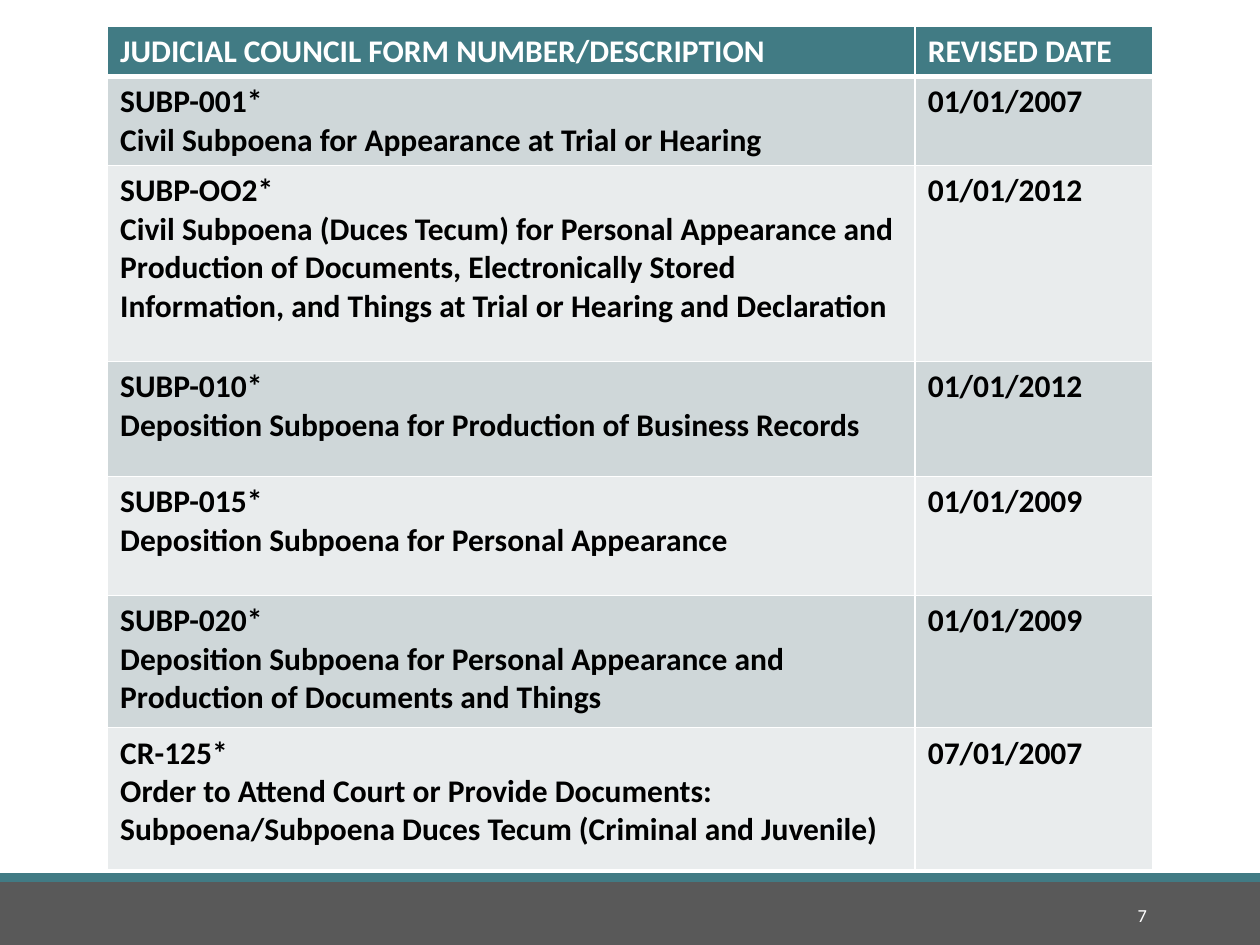
from lxml import etree
from pptx import Presentation
from pptx.dml.color import RGBColor
from pptx.enum.shapes import MSO_SHAPE
from pptx.enum.text import MSO_ANCHOR, PP_ALIGN
from pptx.oxml.ns import qn
from pptx.util import Pt

RECTANGLE = MSO_SHAPE.RECTANGLE
MIDDLE = MSO_ANCHOR.MIDDLE
LEFT, RIGHT = PP_ALIGN.LEFT, PP_ALIGN.RIGHT

WHITE = RGBColor(0xFF, 0xFF, 0xFF)
BLACK = RGBColor(0x00, 0x00, 0x00)
TEAL = RGBColor(0x41, 0x7B, 0x84)
GRAY = RGBColor(0x59, 0x59, 0x59)
BANDS = (RGBColor(0xCF, 0xD7, 0xD9), RGBColor(0xE9, 0xEC, 0xED))

SLIDE_WIDTH, SLIDE_HEIGHT = 720, 540
COLUMN_WIDTHS = (461.5, 135.5)
ROW_HEIGHTS = (28.8, 51, 112, 65.7, 68, 75.6, 81)

HEADER = ("JUDICIAL COUNCIL FORM NUMBER/DESCRIPTION", "REVISED DATE")
FORMS = (
    ("SUBP-001*", "Civil Subpoena for Appearance at Trial or Hearing", "01/01/2007"),
    ("SUBP-OO2*",
     "Civil Subpoena (Duces Tecum) for Personal Appearance and Production of "
     "Documents, Electronically Stored Information, and Things at Trial or "
     "Hearing and Declaration", "01/01/2012"),
    ("SUBP-010*", "Deposition Subpoena for Production of Business Records", "01/01/2012"),
    ("SUBP-015*", "Deposition Subpoena for Personal Appearance", "01/01/2009"),
    ("SUBP-020*",
     "Deposition Subpoena for Personal Appearance and Production of Documents "
     "and Things", "01/01/2009"),
    ("CR-125*",
     "Order to Attend Court or Provide Documents: Subpoena/Subpoena Duces Tecum "
     "(Criminal and Juvenile)", "07/01/2007"),
)


class SlideBuilder:
    """Holds the text style and the slide being built."""

    font = "Calibri"

    def __init__(self, slide):
        self.slide = slide

    def set_text(self, text_frame, text, size, color, bold=False, align=LEFT):
        text_frame.text = text
        for paragraph in text_frame.paragraphs:
            paragraph.alignment = align
            for run in paragraph.runs:
                run.font.name = self.font
                run.font.size = Pt(size)
                run.font.bold = bold
                run.font.color.rgb = color

    def bar(self, top, height, color):
        shape = self.slide.shapes.add_shape(
            RECTANGLE, 0, Pt(top), Pt(SLIDE_WIDTH), Pt(height))
        shape.shadow.inherit = False
        shape.fill.solid()
        shape.fill.fore_color.rgb = color
        shape.line.fill.background()

    def text(self, left, top, width, height, text, size, color, align):
        box = self.slide.shapes.add_textbox(Pt(left), Pt(top), Pt(width), Pt(height))
        box.text_frame.word_wrap = True
        box.text_frame.vertical_anchor = MIDDLE
        self.set_text(box.text_frame, text, size, color, align=align)

    def border(self, cell, side, width, color):
        properties = cell._tc.get_or_add_tcPr()
        line = etree.SubElement(properties, qn(f"a:ln{side}"), w=str(Pt(width)))
        fill = etree.SubElement(line, qn("a:solidFill"))
        etree.SubElement(fill, qn("a:srgbClr"), val=str(color))

    def table(self, left, top, rows):
        table = self.slide.shapes.add_table(
            len(rows), len(COLUMN_WIDTHS), Pt(left), Pt(top),
            Pt(sum(COLUMN_WIDTHS)), Pt(sum(ROW_HEIGHTS))).table
        for column, width in zip(table.columns, COLUMN_WIDTHS):
            column.width = Pt(width)
        for index, (row, height) in enumerate(zip(table.rows, ROW_HEIGHTS)):
            row.height = Pt(height)
            is_header = index == 0
            fill_color = TEAL if is_header else BANDS[(index - 1) % 2]
            for cell, text in zip(row.cells, rows[index]):
                self.set_text(cell.text_frame, text, 18,
                              WHITE if is_header else BLACK, bold=True)
                # A thick rule separates the header from the first form
                for side in "LRTB":
                    thick = (index, side) in ((0, "B"), (1, "T"))
                    self.border(cell, side, 3 if thick else 1, WHITE)
                cell.fill.solid()
                cell.fill.fore_color.rgb = fill_color


def main():
    presentation = Presentation()
    presentation.slide_width = Pt(SLIDE_WIDTH)
    presentation.slide_height = Pt(SLIDE_HEIGHT)
    blank_layout = presentation.slide_layouts[6]
    builder = SlideBuilder(presentation.slides.add_slide(blank_layout))

    # Footer band with slide number
    builder.bar(504, 36, GRAY)
    builder.bar(499, 5, TEAL)
    builder.text(584.6, 508.5, 77.8, 28.8, "7", 10.5, WHITE, RIGHT)

    # Table of forms
    form_rows = [(f"{number}\n{title}", date) for number, title, date in FORMS]
    builder.table(61.5, 14.8, [HEADER, *form_rows])

    presentation.save("out.pptx")


if __name__ == "__main__":
    main()
